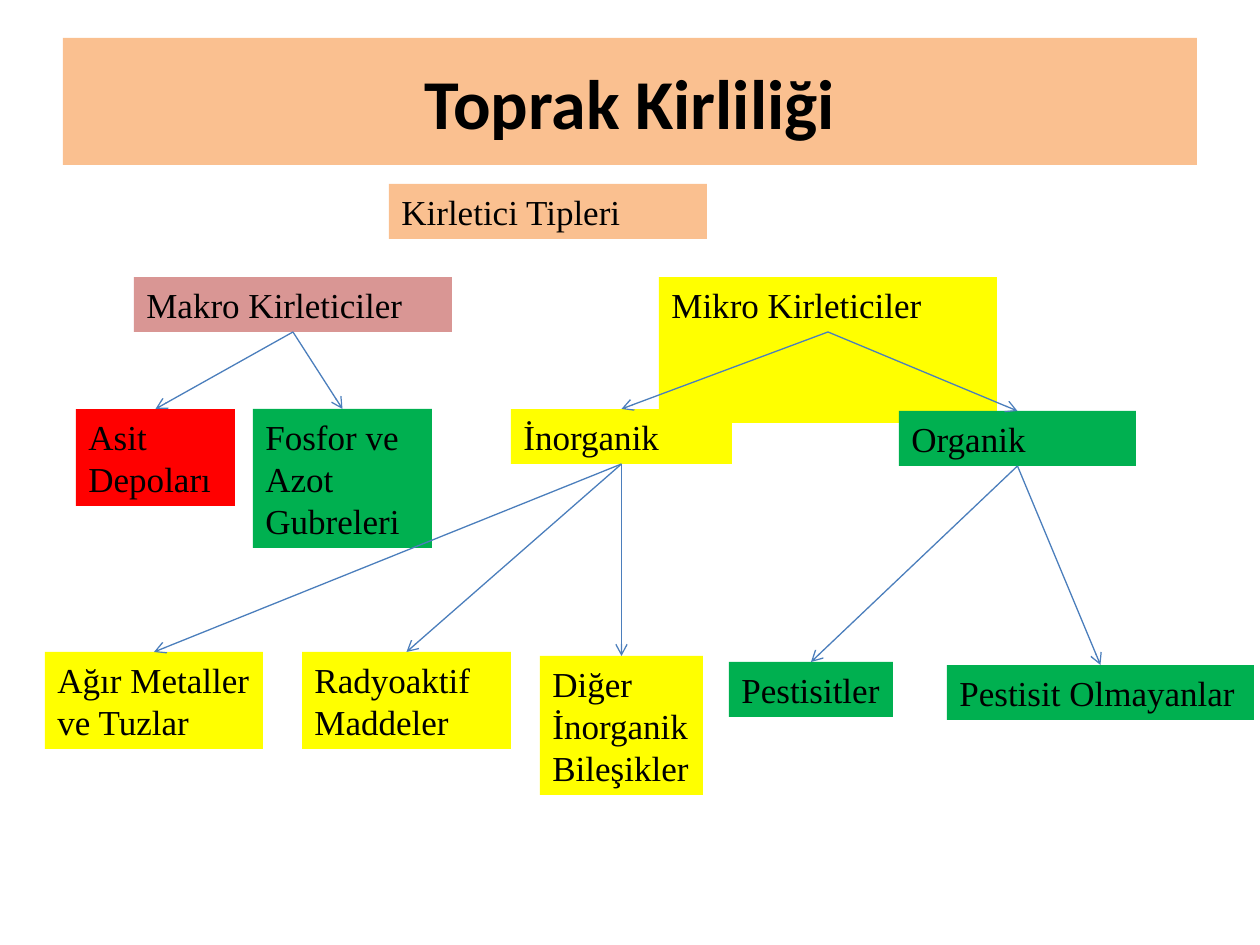
from dataclasses import dataclass

from lxml.etree import SubElement
from pptx import Presentation
from pptx.dml.color import RGBColor
from pptx.enum.shapes import MSO_CONNECTOR, MSO_SHAPE
from pptx.enum.text import MSO_ANCHOR, PP_ALIGN
from pptx.oxml.ns import qn
from pptx.util import Pt

EMU_PER_PX = 914400 / 126
TOP, BOTTOM = 0, 2


def px(length):
    return round(length * EMU_PER_PX)


@dataclass(frozen=True)
class Theme:
    peach: str = "FAC090"
    rose: str = "D99694"
    yellow: str = "FFFF00"
    green: str = "00B050"
    red: str = "FF0000"
    ink: str = "000000"
    arrow: str = "4B7EBC"
    title_font: str = "Calibri"
    label_font: str = "Times New Roman"
    title_size: int = 40
    label_size: int = 20
    arrow_width: float = 0.75


class Diagram:
    def __init__(self, slide, theme):
        self.slide = slide
        self.theme = theme

    def panel(self, text, left, top, width, height, fill):
        """Add a borderless filled rectangle and return it with its paragraph."""
        panel = self.slide.shapes.add_shape(
            MSO_SHAPE.RECTANGLE, px(left), px(top), px(width), px(height))
        panel.shadow.inherit = False
        panel.fill.solid()
        panel.fill.fore_color.rgb = RGBColor.from_string(fill)
        panel.line.fill.background()
        panel.text_frame.word_wrap = True
        panel.text_frame.text = text
        paragraph = panel.text_frame.paragraphs[0]
        paragraph.font.color.rgb = RGBColor.from_string(self.theme.ink)
        return panel, paragraph

    def title(self, text, left, top, width, height):
        panel, paragraph = self.panel(text, left, top, width, height, self.theme.peach)
        panel.text_frame.vertical_anchor = MSO_ANCHOR.MIDDLE
        paragraph.alignment = PP_ALIGN.CENTER
        paragraph.font.name = self.theme.title_font
        paragraph.font.size = Pt(self.theme.title_size)
        paragraph.font.bold = True

    def label(self, text, left, top, width, fill, lines=1, height=None):
        """Add a label as tall as its number of text lines, unless a height is given."""
        panel, paragraph = self.panel(
            text, left, top, width, height or 13 + 42 * lines, fill)
        panel.text_frame.vertical_anchor = MSO_ANCHOR.TOP
        paragraph.alignment = PP_ALIGN.LEFT
        paragraph.font.name = self.theme.label_font
        paragraph.font.size = Pt(self.theme.label_size)
        return panel

    def arrow(self, parent, child, start=None):
        """Point from the parent's bottom, or a start inside it, to the child's top."""
        x, y = start or (0, 0)
        arrow = self.slide.shapes.add_connector(
            MSO_CONNECTOR.STRAIGHT, px(x), px(y), px(x), px(y))
        if start is None:
            arrow.begin_connect(parent, BOTTOM)
        arrow.end_connect(child, TOP)
        arrow.line.color.rgb = RGBColor.from_string(self.theme.arrow)
        arrow.line.width = Pt(self.theme.arrow_width)
        SubElement(arrow.line._get_or_add_ln(), qn("a:tailEnd"), type="arrow")
        SubElement(arrow._element.spPr, qn("a:effectLst"))


def main():
    presentation = Presentation()
    presentation.slide_width, presentation.slide_height = px(1260), px(945)
    theme = Theme()
    diagram = Diagram(
        presentation.slides.add_slide(presentation.slide_layouts[6]), theme)

    diagram.title("Toprak Kirliliği", 63, 38, 1134, 127)
    diagram.label("Kirletici Tipleri", 389, 184, 318, theme.peach)
    macro = diagram.label("Makro Kirleticiler", 134, 277, 318, theme.rose)
    micro = diagram.label("Mikro Kirleticiler", 659, 277, 338, theme.yellow, height=146)

    acid = diagram.label("Asit Depoları", 76, 409, 159, theme.red, lines=2)
    fertilizers = diagram.label(
        "Fosfor ve Azot Gubreleri", 253, 409, 179, theme.green, lines=3)
    inorganic = diagram.label("İnorganik", 511, 409, 221, theme.yellow)
    organic = diagram.label("Organik", 899, 411, 237, theme.green)

    metals = diagram.label(
        "Ağır Metaller ve Tuzlar", 45, 652, 218, theme.yellow, lines=2)
    radioactive = diagram.label(
        "Radyoaktif Maddeler", 302, 652, 209, theme.yellow, lines=2)
    other_inorganic = diagram.label(
        "Diğer İnorganik Bileşikler", 540, 656, 163, theme.yellow, lines=3)
    pesticides = diagram.label("Pestisitler", 729, 662, 164, theme.green)
    non_pesticides = diagram.label("Pestisit Olmayanlar", 947, 665, 307, theme.green)

    below_micro_text = (828, 332)
    branches = [
        (macro, [acid, fertilizers], None),
        (micro, [inorganic, organic], below_micro_text),
        (inorganic, [metals, radioactive, other_inorganic], None),
        (organic, [pesticides, non_pesticides], None),
    ]
    for parent, children, start in branches:
        for child in children:
            diagram.arrow(parent, child, start)

    presentation.save("out.pptx")


if __name__ == "__main__":
    main()
